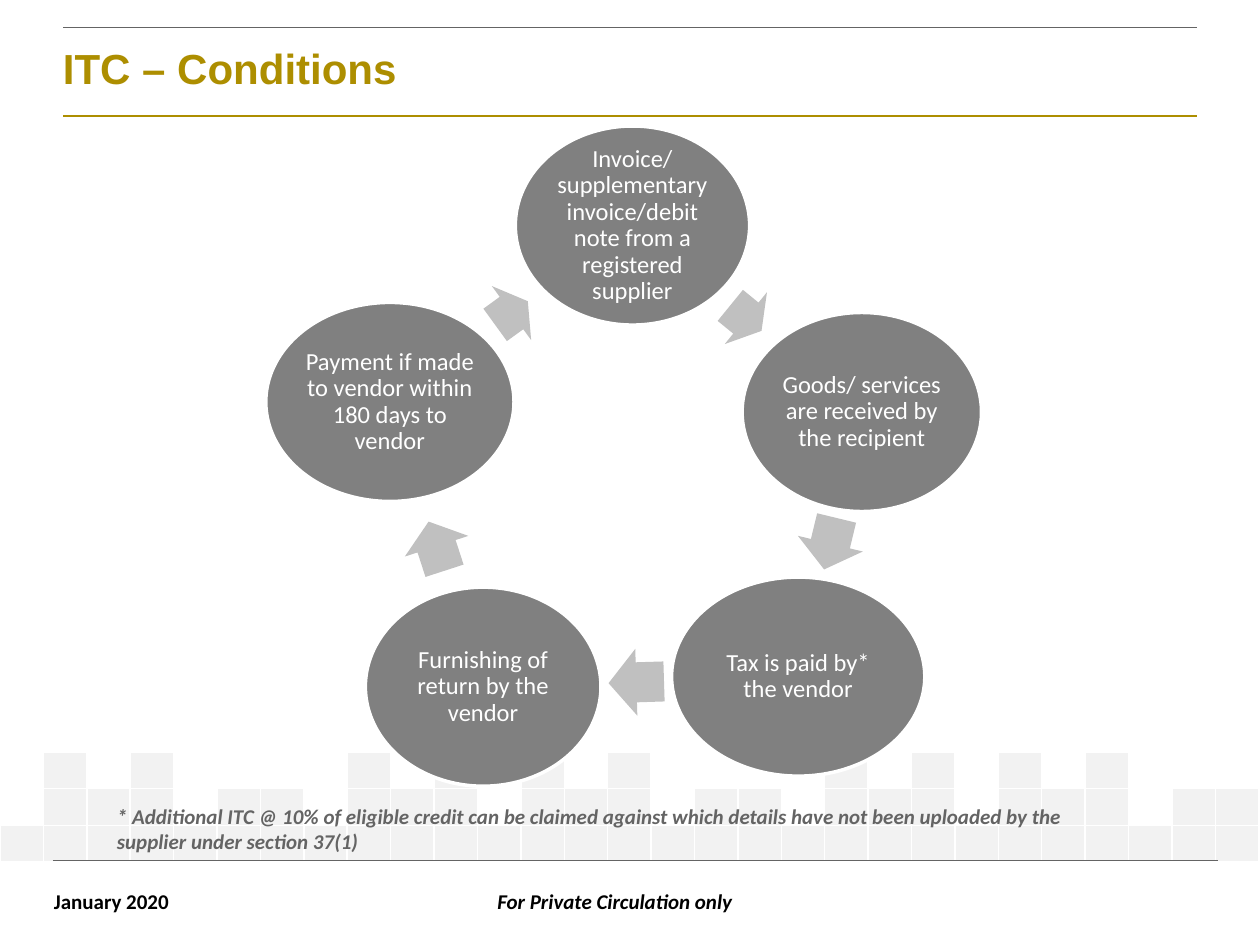
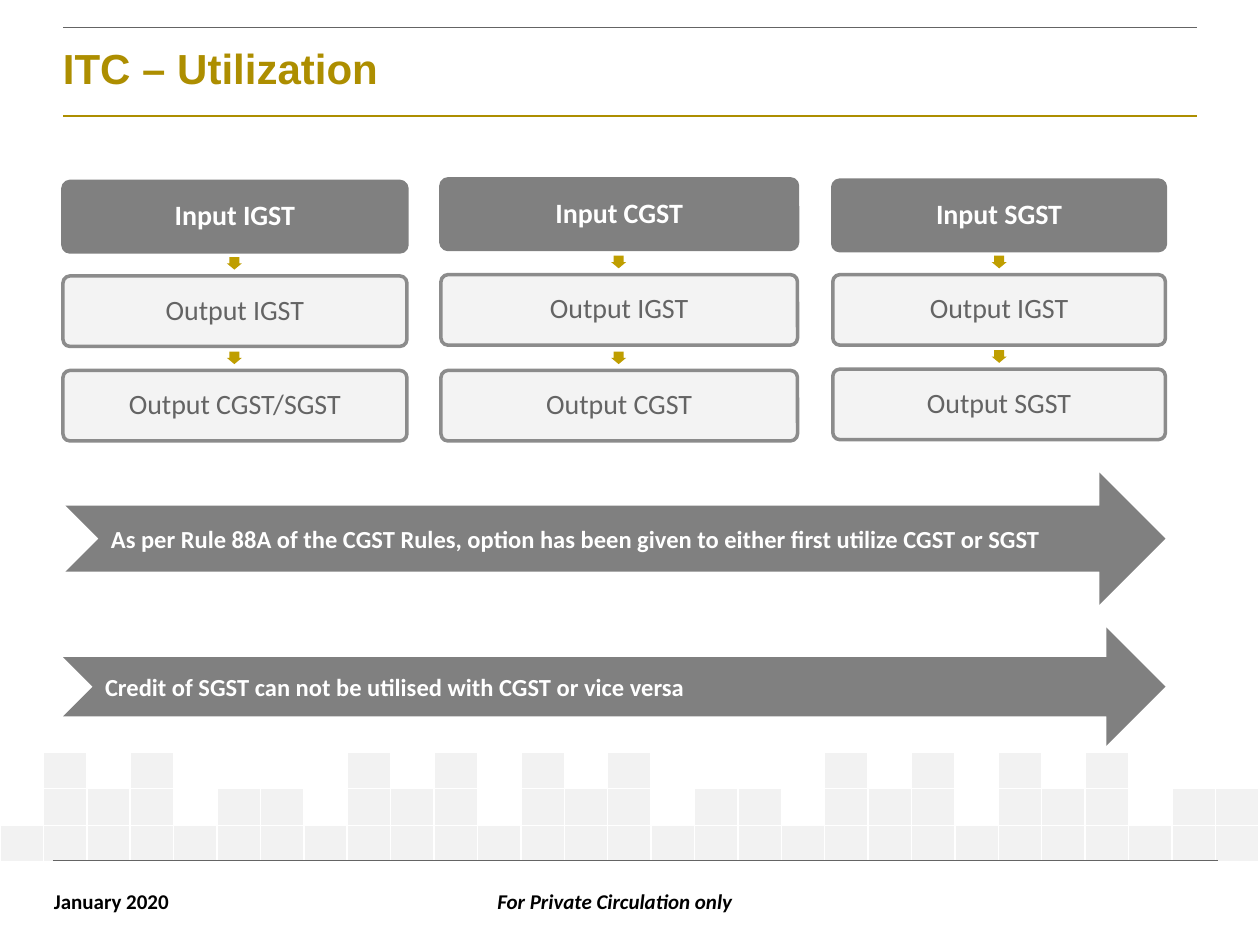
from dataclasses import dataclass

from lxml import etree
from pptx import Presentation
from pptx import util as u
from pptx.dml.color import RGBColor
from pptx.enum import shapes, text
from pptx.oxml.ns import qn

PX = 9144  # EMU in one px, at 100 px to the inch


@dataclass(frozen=True)
class Theme:
    gold: str = "AD8E00"
    arrow_gold: str = "BF9E00"
    gray: str = "808080"
    arrow_gray: str = "C0C0C0"
    pale: str = "F2F2F2"
    ink: str = "646464"
    black: str = "000000"
    white: str = "FFFFFF"
    title_font: str = "Arial"
    body_font: str = "Calibri"
    title_size: int = 24
    box_size: int = 16
    body_size: int = 14
    note_size: int = 12


theme = Theme()


def add_block(slide, kind, box, fill, line=None):
    """Add a preset shape with a plain fill and an optional 2 pt outline."""
    shape = slide.shapes.add_shape(kind, *[length * PX for length in box])
    shape.shadow.inherit = False
    shape.fill.solid()
    shape.fill.fore_color.rgb = RGBColor.from_string(fill)
    if line:
        shape.line.color.rgb = RGBColor.from_string(line)
        shape.line.width = u.Pt(2)
    else:
        shape.line.fill.background()
    return shape


def write(shape, words, size, color, bold=False, italic=False, font=theme.body_font,
          align=text.PP_ALIGN.LEFT, anchor=text.MSO_ANCHOR.MIDDLE,
          spacing=1.0, insets=(10, 5, 10, 5)):
    """Fill a shape with one paragraph; insets are left, top, right, bottom."""
    frame = shape.text_frame
    frame.text = words
    frame.word_wrap = True
    frame.vertical_anchor = anchor
    frame.margin_left, frame.margin_top, frame.margin_right, frame.margin_bottom = [
        inset * PX for inset in insets]
    paragraph = frame.paragraphs[0]
    paragraph.alignment = align
    paragraph.line_spacing = spacing
    run_font = paragraph.runs[0].font
    run_font.name, run_font.size = font, u.Pt(size)
    run_font.bold, run_font.italic = bold, italic
    run_font.color.rgb = RGBColor.from_string(color)


presentation = Presentation()
presentation.slide_width = 1000 * PX
presentation.slide_height = 750 * PX

# Shared frame: skyline of tiles, rules, footers and title
skyline = [
    ".#.#....#.#.#.#....#.#.#.#...",
    ".###.##.###.###.##.###.###.##",
    "#" * 29,
]
rules = [(50, 950, 92, theme.gold, 1.5), (50, 950, 22, theme.ink, 0.5),
         (42, 967, 683, theme.ink, 0.25)]
footers = [((33, 700, 113, 30), "January 2020", False, text.PP_ALIGN.LEFT),
           ((242, 700, 492, 30), "For Private Circulation only", True, text.PP_ALIGN.CENTER)]

for title in ["ITC – Conditions", "ITC – Utilization"]:
    slide = presentation.slides.add_slide(presentation.slide_layouts[6])

    table = slide.shapes.add_table(3, 29, 0, 597 * PX, 1000 * PX, 87 * PX).table
    table.first_row = table.horz_banding = False
    for row, tiles in zip(table.rows, skyline):
        row.height = 29 * PX
        for cell, tile in zip(row.cells, tiles):
            cell.margin_left = cell.margin_right = cell.margin_top = cell.margin_bottom = 0
            etree.SubElement(cell.text_frame.paragraphs[0]._p, qn("a:endParaRPr"), sz="600")
            properties = cell._tc.get_or_add_tcPr()
            for side in ["lnL", "lnR", "lnT", "lnB"]:
                border = etree.SubElement(properties, qn(f"a:{side}"), w=str(u.Pt(1)))
                border_fill = etree.SubElement(border, qn("a:solidFill"))
                etree.SubElement(border_fill, qn("a:srgbClr"), val=theme.white)
            if tile == "#":
                cell.fill.solid()
                cell.fill.fore_color.rgb = RGBColor.from_string(theme.pale)
            else:
                cell.fill.background()

    for left, right, y, color, width in rules:
        rule = slide.shapes.add_connector(shapes.MSO_CONNECTOR.STRAIGHT,
                                          left * PX, y * PX, right * PX, y * PX)
        rule.line.color.rgb = RGBColor.from_string(color)
        rule.line.width = u.Pt(width)
        etree.SubElement(rule._element.spPr, qn("a:effectLst"))

    for box, words, italic, align in footers:
        footer = slide.shapes.add_textbox(*[length * PX for length in box])
        write(footer, words, theme.note_size, theme.black, bold=True, italic=italic,
              align=align, anchor=text.MSO_ANCHOR.TOP)
        footer.text_frame.word_wrap = italic  # the short date stays on one line

    title_box = slide.shapes.add_textbox(50 * PX, 22 * PX, 900 * PX, 66 * PX)
    write(title_box, title, theme.title_size, theme.gold, bold=True,
          font=theme.title_font, spacing=0.85, insets=(0, 4, 0, 0))

conditions, utilization = presentation.slides

# Conditions: five ovals in a cycle, each followed by its arrow
cycle = [
    ("Invoice/ supplementary invoice/debit note from a registered supplier",
     (409, 100, 186, 158), (576, 226, 32, 53), 39.2),
    ("Goods/ services are received by the recipient",
     (589, 248, 190, 158), (638, 405, 42, 53), 103.6),
    ("Tax is paid by* the vendor",
     (533, 458, 201, 158), (483, 515, 44, 53), 178.2),
    ("Furnishing of return by the vendor",
     (290, 466, 187, 158), (326, 407, 41, 53), 252),
    ("Payment if made to vendor within 180 days to vendor",
     (211, 240, 197, 158), (390, 222, 32, 53), 324),
]
for condition, oval_box, arrow_box, angle in cycle:
    oval = add_block(conditions, shapes.MSO_SHAPE.OVAL, oval_box, theme.gray, theme.white)
    write(oval, condition, theme.body_size, theme.white, align=text.PP_ALIGN.CENTER,
          spacing=0.9, insets=(2, 2, 2, 2))
    arrow = add_block(conditions, shapes.MSO_SHAPE.RIGHT_ARROW, arrow_box, theme.arrow_gray)
    arrow.adjustments[0] = 0.6
    arrow.rotation = angle

footnote = conditions.shapes.add_textbox(83 * PX, 633 * PX, 800 * PX, 50 * PX)
write(footnote, "* Additional ITC @ 10% of eligible credit can be claimed against which details "
      "have not been uploaded by the supplier under section 37(1)",
      theme.note_size, theme.ink, bold=True, italic=True, anchor=text.MSO_ANCHOR.TOP)

# Utilization: three columns of input and output taxes, all ending on one row
last_top, box_height = 294, 56
columns = [
    (50, 144, 273, ["Input IGST", "Output IGST", "Output CGST/SGST"]),
    (350, 142, 283, ["Input CGST", "Output IGST", "Output CGST"]),
    (661, 143, 264, ["Input SGST", "Output IGST", "Output SGST"]),
]
for left, first_top, width, taxes in columns:
    pitch = (last_top - first_top) // 2
    for index, tax in enumerate(taxes):
        is_input = index == 0
        top = first_top + index * pitch
        tax_box = add_block(utilization, shapes.MSO_SHAPE.ROUNDED_RECTANGLE,
                            (left, top, width, box_height),
                            theme.gray if is_input else theme.pale, theme.gray)
        tax_box.adjustments[0] = 0.1
        write(tax_box, tax, theme.box_size, theme.white if is_input else theme.ink,
              bold=is_input, align=text.PP_ALIGN.CENTER, spacing=0.9, insets=(4, 4, 4, 4))
        if not is_input:
            for color in tax_box._element.spPr.iter(qn("a:srgbClr")):
                etree.SubElement(color, qn("a:alpha"), val="90000")
            step = add_block(utilization, shapes.MSO_SHAPE.DOWN_ARROW,
                             (left + width // 2 - 6, top - 15, 12, 10), theme.arrow_gold)
            step.adjustments[0] = 0.67

notes = [
    ((52, 375, 873, 105), "As per Rule 88A of the CGST Rules, option has been given "
                          "to either first utilize CGST or SGST"),
    ((50, 498, 875, 94), "Credit of SGST can not be utilised with CGST or vice versa"),
]
for box, note in notes:
    banner = add_block(utilization, shapes.MSO_SHAPE.NOTCHED_RIGHT_ARROW, box, theme.gray)
    write(banner, note, theme.body_size, theme.white, bold=True)

presentation.save("out.pptx")
